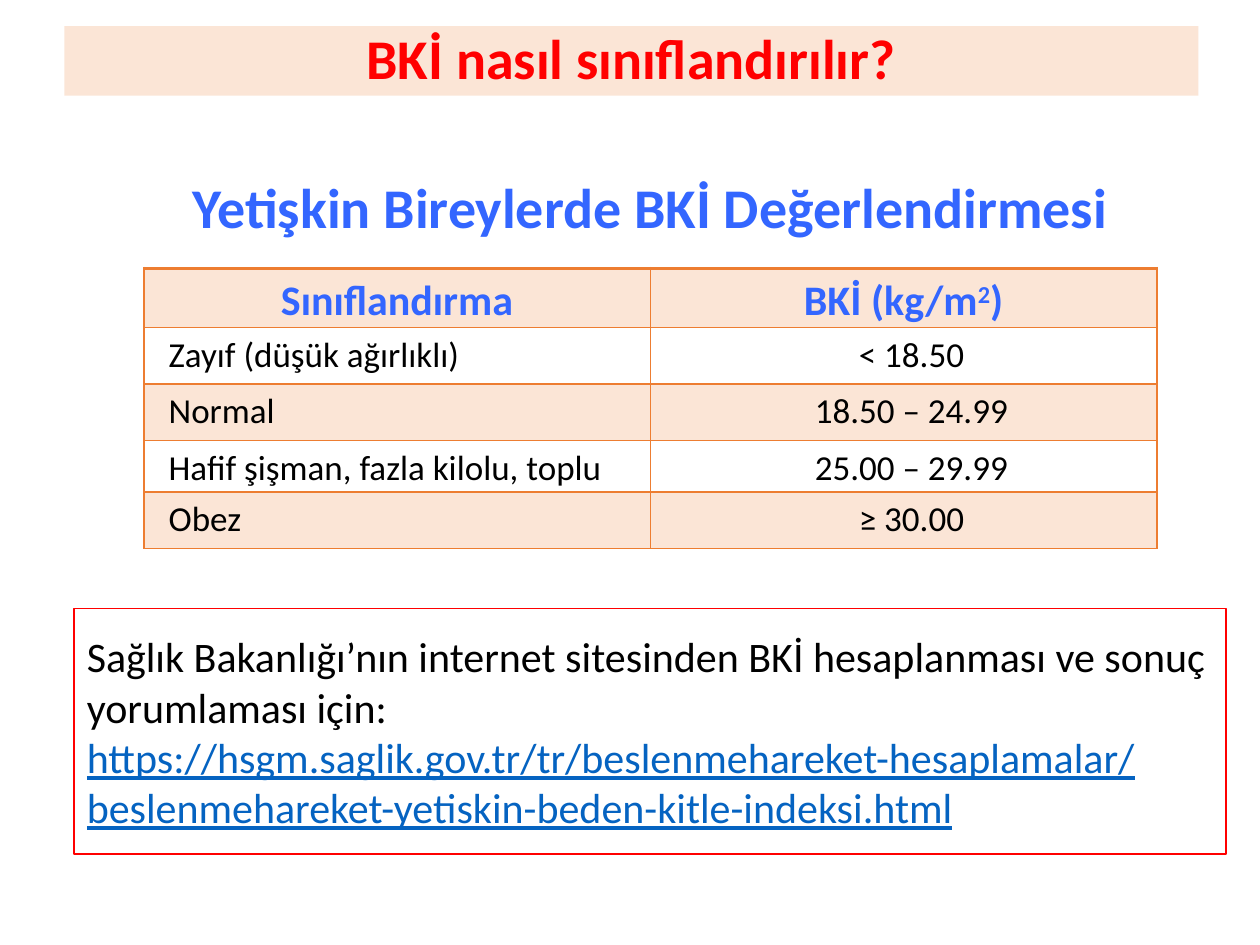
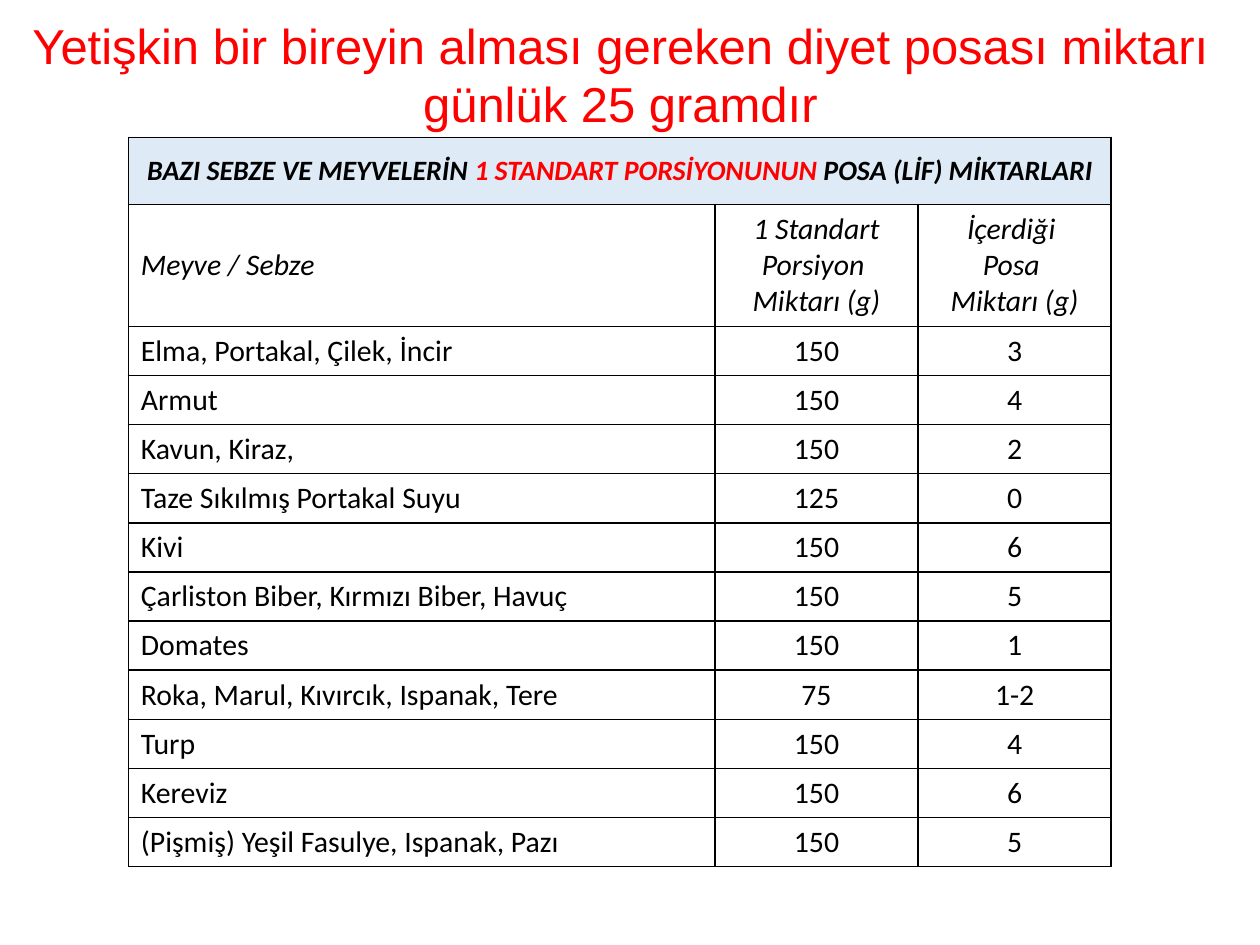
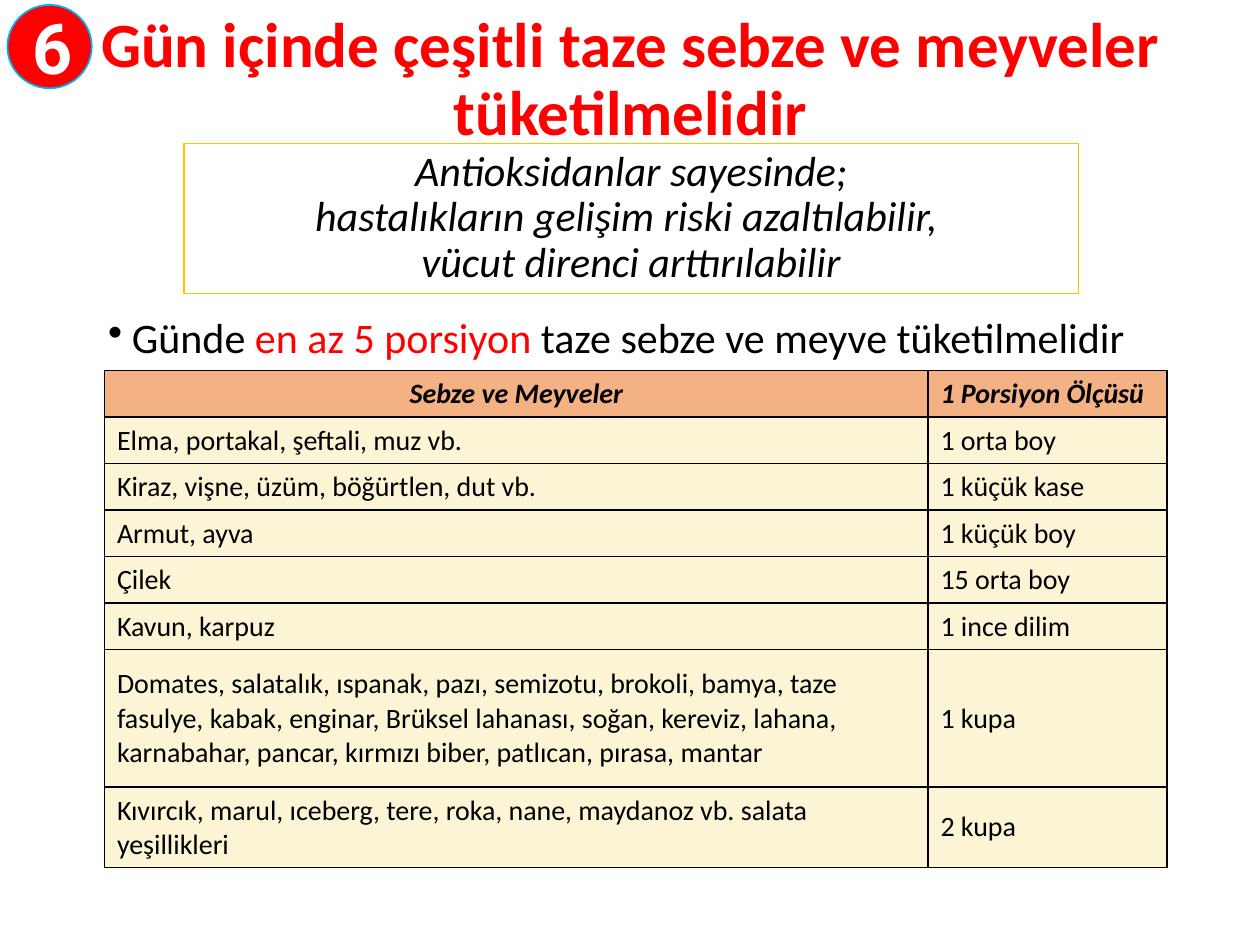
"""Build three slides on body mass index, dietary fibre, and fruit and vegetables."""
from lxml.etree import SubElement
from pptx import Presentation
from pptx.dml.color import RGBColor
from pptx.enum.shapes import MSO_SHAPE as Shape
from pptx.enum.text import MSO_ANCHOR as Anchor, PP_ALIGN as Align
from pptx.oxml import parse_xml
from pptx.oxml.ns import nsdecls, qn
from pptx.util import Cm, Pt

RED = RGBColor(0xFF, 0x00, 0x00)
BLACK = RGBColor(0x00, 0x00, 0x00)
WHITE = RGBColor(0xFF, 0xFF, 0xFF)
BLUE = RGBColor(0x33, 0x66, 0xFF)
LINK_BLUE = RGBColor(0x05, 0x63, 0xC1)
SKY = RGBColor(0x00, 0xB0, 0xF0)
GOLD = RGBColor(0xFF, 0xC0, 0x00)
ORANGE = RGBColor(0xED, 0x7D, 0x31)
PEACH = RGBColor(0xFB, 0xE5, 0xD6)
PALE_BLUE = RGBColor(0xDE, 0xEB, 0xF7)
SALMON = RGBColor(0xF4, 0xB1, 0x83)
CREAM = RGBColor(0xFB, 0xF4, 0xD5)

BODY = {"name": "Calibri", "size": Pt(24), "color": BLACK}
TITLE = {**BODY, "size": Pt(32), "color": RED, "bold": True}
TABLE_TITLE = {**TITLE, "color": BLUE}
TABLE_HEAD = {**BODY, "size": Pt(16), "bold": True, "italic": True}
FIBRE_TEXT = {**BODY, "size": Pt(17)}
PORTION_TEXT = {**BODY, "size": Pt(16)}
CENTRED = {"alignment": Align.CENTER}
CENTRED_TIGHT = {**CENTRED, "line_spacing": 0.9}
ALL_EDGES = dict.fromkeys("LRTB", 1)


def write(frame, paragraphs, look, layout):
    """Fill a text frame; a paragraph is a string or a list of (text, format) spans."""
    for index, content in enumerate(paragraphs):
        para = frame.add_paragraph() if index else frame.paragraphs[0]
        for name, value in layout.items():
            setattr(para, name, value)
        for text, extra in [(content, {})] if isinstance(content, str) else content:
            span = para.add_run()
            span.text = text
            for name, value in {**look, **extra}.items():
                if name == "color":
                    span.font.color.rgb = value
                else:
                    setattr(span.font, name, value)


def outline(cell, edges, color):
    """Draw the borders of a cell, given as edge letters with widths in points."""
    borders = [edge for edge in "LRTB" if edge in edges]
    for index, edge in enumerate(borders):
        cell._tc.get_or_add_tcPr().insert(index, parse_xml(
            f'<a:ln{edge} {nsdecls("a")} w="{Pt(edges[edge])}"><a:solidFill>'
            f'<a:srgbClr val="{color}"/></a:solidFill></a:ln{edge}>'))


deck = Presentation()
deck.slide_width, deck.slide_height = Cm(25.4), Cm(19.05)
bmi_page, fibre_page, portion_page = [
    deck.slides.add_slide(deck.slide_layouts[6]) for _ in range(3)]

boxes = [
    {"page": bmi_page, "at": (1.3, 0.53, 22.86, 1.4), "fill": PEACH,
     "text": ["BKİ nasıl sınıflandırılır?"], "look": TITLE, "layout": CENTRED_TIGHT},
    {"page": bmi_page, "at": (1.5, 12.27, 23.22, 4.95), "line": (RED, 1),
     "text": ["Sağlık Bakanlığı’nın internet sitesinden BKİ hesaplanması ve sonuç "
              "yorumlaması için:",
              [("https://hsgm.saglik.gov.tr/tr/beslenmehareket-hesaplamalar/"
                "beslenmehareket-yetiskin-beden-kitle-indeksi.html",
                {"color": LINK_BLUE, "underline": True})]]},
    {"page": fibre_page, "at": (0.25, 0.18, 24.51, 2.64), "anchor": Anchor.TOP,
     "text": ["Yetişkin bir bireyin alması gereken diyet posası miktarı",
              "günlük 25 gramdır"],
     "look": {"name": "Arial", "size": Pt(28), "color": RED}, "layout": CENTRED},
    {"page": portion_page, "at": (0.15, 0.28, 25.12, 2.7),
     "text": ["Gün içinde çeşitli taze sebze ve meyveler tüketilmelidir"],
     "look": {**TITLE, "size": Pt(36)}, "layout": CENTRED_TIGHT},
    {"page": portion_page, "at": (1.93, 6.27, 21.59, 1.2), "anchor": Anchor.TOP,
     "text": [[("Günde ", {}), ("en az 5 porsiyon ", {"color": RED}),
               ("taze sebze ve meyve tüketilmelidir", {})]],
     "layout": {"line_spacing": 0.9}, "bullet": "•"},
    {"page": portion_page, "at": (0.15, 0.1, 1.7, 1.68), "shape": Shape.OVAL,
     "fill": RED, "line": (SKY, 1), "text": ["6"], "layout": CENTRED,
     "look": {"name": "Roboto", "size": Pt(40), "color": WHITE, "bold": True}},
    {"page": portion_page, "at": (3.71, 2.9, 18.03, 3.02), "line": (GOLD, 0.75),
     "anchor": Anchor.TOP,
     "text": ["Antioksidanlar sayesinde;",
              "hastalıkların gelişim riski azaltılabilir, ",
              "vücut direnci arttırılabilir"],
     "look": {**BODY, "italic": True}, "layout": CENTRED_TIGHT},
]

for item in boxes:
    place = [Cm(length) for length in item["at"]]
    if "fill" in item or "line" in item:
        box = item["page"].shapes.add_shape(item.get("shape", Shape.RECTANGLE), *place)
        box.shadow.inherit = False
    else:
        box = item["page"].shapes.add_textbox(*place)
    if "fill" in item:
        box.fill.solid()
        box.fill.fore_color.rgb = item["fill"]
    else:
        box.fill.background()
    if "line" in item:
        box.line.color.rgb, box.line.width = item["line"][0], Pt(item["line"][1])
    else:
        box.line.fill.background()
    frame = box.text_frame
    frame.word_wrap = True
    frame.vertical_anchor = item.get("anchor", Anchor.MIDDLE)
    layout = {"alignment": Align.LEFT, **item.get("layout", {})}
    write(frame, item["text"], item.get("look", BODY), layout)
    if "bullet" in item:
        for para in frame.paragraphs:
            settings = para._p.get_or_add_pPr()
            settings.set("marL", str(Cm(0.48)))
            settings.set("indent", str(Cm(-0.48)))
            SubElement(settings, qn("a:buChar")).set("char", item["bullet"])

LEFT, CENTER, JUSTIFY = Align.LEFT, Align.CENTER, Align.JUSTIFY
fibre_rows = [
    ("Elma, Portakal, Çilek, İncir", "150", "3"),
    ("Armut", "150", "4"),
    ("Kavun, Kiraz,", "150", "2"),
    ("Taze Sıkılmış Portakal Suyu", "125", "0"),
    ("Kivi", "150", "6"),
    ("Çarliston Biber, Kırmızı Biber, Havuç", "150", "5"),
    ("Domates", "150", "1"),
    ("Roka, Marul, Kıvırcık, Ispanak, Tere", "75", "1-2"),
    ("Turp", "150", "4"),
    ("Kereviz", "150", "6"),
    ("(Pişmiş) Yeşil Fasulye, Ispanak, Pazı", "150", "5"),
]
grids = [
    {"page": bmi_page, "at": (2.9, 2.82), "line": ORANGE, "spacing": 1.15,
     "margins": (0.18, 0), "widths": [10.21] * 2,
     "heights": [2.59, 1.17, 1.14, 1.14, 1.04, 1.14],
     "rows": [
         ("Yetişkin Bireylerde BKİ Değerlendirmesi",),
         ("Sınıflandırma", [[("BKİ (kg/m", {}), ("2", {}), (")", {})]]),
         ("Zayıf (düşük ağırlıklı)", "< 18.50"),
         ("Normal", "18.50 – 24.99"),
         ("Hafif şişman, fazla kilolu, toplu", "25.00 – 29.99"),
         ("Obez", "≥ 30.00")],
     "looks": [TABLE_TITLE, {**TABLE_TITLE, "size": Pt(24)}]
              + [{**BODY, "size": Pt(20)}] * 4,
     "aligns": [(CENTER, CENTER)] * 2 + [(JUSTIFY, CENTER)] * 4,
     "fills": [None, PEACH] * 3,
     "edges": [{"B": 2}, {**ALL_EDGES, "T": 2}] + [ALL_EDGES] * 4},
    {"page": fibre_page, "at": (2.59, 2.77), "line": BLACK, "spacing": 1.0,
     "margins": (0.25, 0.13), "widths": [11.82, 4.1, 3.89],
     "heights": [1.35, 2.46] + [0.99] * len(fibre_rows),
     "rows": [
         ([[("BAZI SEBZE VE MEYVELERİN ", {}),
            ("1 STANDART PORSİYONUNUN ", {"color": RED}),
            ("POSA (LİF) MİKTARLARI", {})]],),
         ("Meyve / Sebze", ["1 Standart Porsiyon ", "Miktarı (g)"],
          ["İçerdiği ", "Posa ", "Miktarı (g)"])] + fibre_rows,
     "looks": [TABLE_HEAD, {**FIBRE_TEXT, "italic": True}]
              + [FIBRE_TEXT] * len(fibre_rows),
     "aligns": [(CENTER,) * 3] + [(LEFT, CENTER, CENTER)] * (len(fibre_rows) + 1),
     "fills": [PALE_BLUE] + [None] * (len(fibre_rows) + 1),
     "edges": [ALL_EDGES] * (len(fibre_rows) + 2)},
    {"page": portion_page, "at": (2.11, 7.47), "line": BLACK, "spacing": 1.0,
     "margins": (0.25, 0.13), "widths": [16.6, 4.82],
     "heights": [0.93] * 6 + [2.77, 1.6],
     "rows": [
         ("Sebze ve Meyveler", "1 Porsiyon Ölçüsü"),
         ("Elma, portakal, şeftali, muz vb.", "1 orta boy"),
         ("Kiraz, vişne, üzüm, böğürtlen, dut vb.", "1 küçük kase"),
         ("Armut, ayva", "1 küçük boy"),
         ("Çilek", "15 orta boy"),
         ("Kavun, karpuz", "1 ince dilim"),
         ("Domates, salatalık, ıspanak, pazı, semizotu, brokoli, bamya, taze fasulye, "
          "kabak, enginar, Brüksel lahanası, soğan, kereviz, lahana, karnabahar, "
          "pancar, kırmızı biber, patlıcan, pırasa, mantar", "1 kupa"),
         ("Kıvırcık, marul, ıceberg, tere, roka, nane, maydanoz vb. salata yeşillikleri",
          "2 kupa")],
     "looks": [TABLE_HEAD] + [PORTION_TEXT] * 7,
     "aligns": [(CENTER, LEFT)] + [(LEFT, LEFT)] * 7,
     "fills": [SALMON] + [CREAM] * 7,
     "edges": [ALL_EDGES] * 8},
]

tables = []
for grid in grids:
    rows, widths, heights = grid["rows"], grid["widths"], grid["heights"]
    table = grid["page"].shapes.add_table(
        len(rows), len(widths), *[Cm(length) for length in grid["at"]],
        Cm(sum(widths)), Cm(sum(heights))).table
    tables.append(table)
    table.first_row = table.horz_banding = False
    for column, width in zip(table.columns, widths):
        column.width = Cm(width)
    for index, texts in enumerate(rows):
        table.rows[index].height = Cm(heights[index])
        if len(texts) == 1:
            table.cell(index, 0).merge(table.cell(index, len(widths) - 1))
        for number in range(len(widths)):
            cell = table.cell(index, number)
            cell.vertical_anchor = Anchor.MIDDLE
            cell.margin_left = cell.margin_right = Cm(grid["margins"][0])
            cell.margin_top = cell.margin_bottom = Cm(grid["margins"][1])
            if grid["fills"][index]:
                cell.fill.solid()
                cell.fill.fore_color.rgb = grid["fills"][index]
            else:
                cell.fill.background()
            outline(cell, grid["edges"][index], grid["line"])
            if number < len(texts):
                text = texts[number]
                write(cell.text_frame, [text] if isinstance(text, str) else text,
                      grid["looks"][index],
                      {"alignment": grid["aligns"][index][number],
                       "line_spacing": grid["spacing"]})

bmi_table = tables[0]
for index in range(2, 6):
    for number in range(2):
        cell = bmi_table.cell(index, number)
        cell.vertical_anchor = Anchor.TOP
        cell.margin_left = Cm(0.5)
square = bmi_table.cell(1, 1).text_frame.paragraphs[0].runs[1]
square._r.get_or_add_rPr().set("baseline", "30000")

deck.save("out.pptx")
